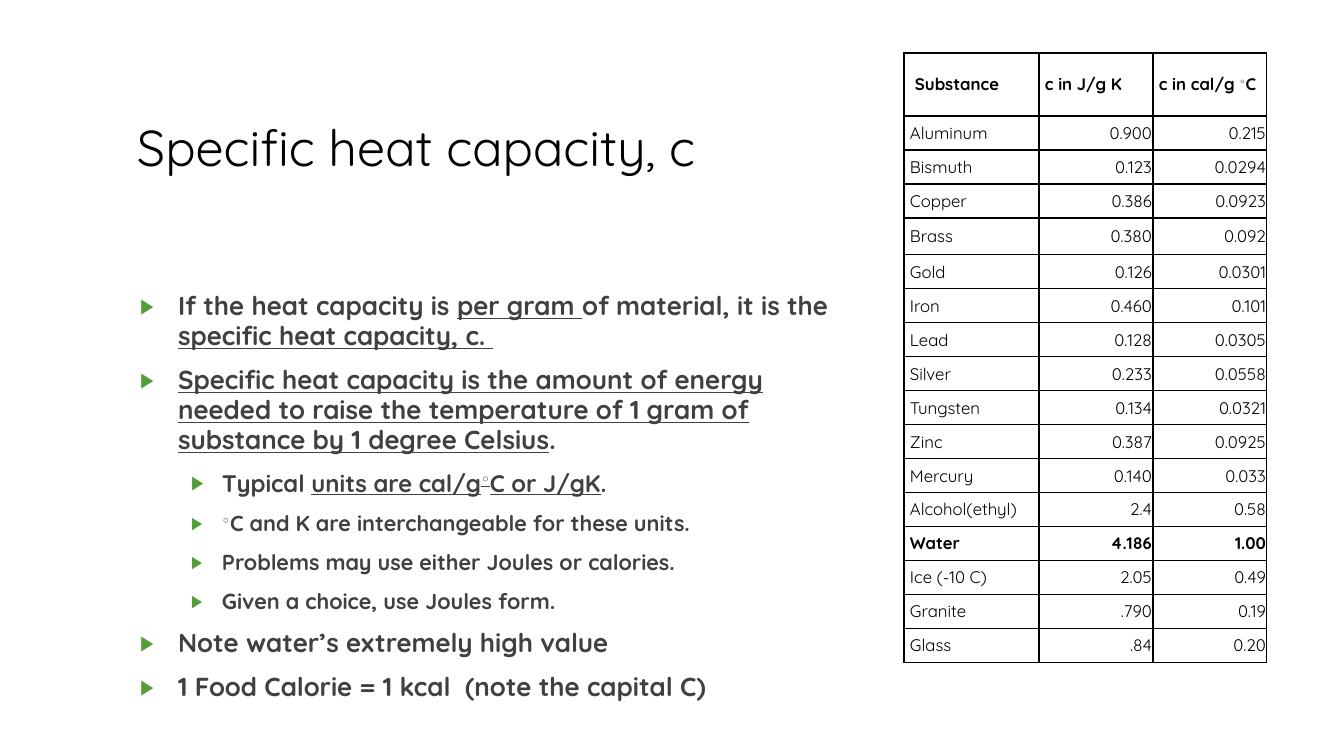
"""Build the slide on specific heat capacity with its table of substances."""
import lxml.etree
import pptx
import pptx.dml.color
import pptx.enum.text
import pptx.oxml.ns
import pptx.util

PX = 12192000 / 1344
FONT = "Quicksand"
BLACK = pptx.dml.color.RGBColor(0x00, 0x00, 0x00)
GREY = pptx.dml.color.RGBColor(0x40, 0x40, 0x40)
GREEN = pptx.dml.color.RGBColor(0x54, 0x9E, 0x39)
WHITE = pptx.dml.color.RGBColor(0xFF, 0xFF, 0xFF)
LEFT = pptx.enum.text.PP_ALIGN.LEFT
RIGHT = pptx.enum.text.PP_ALIGN.RIGHT
MIDDLE = pptx.enum.text.MSO_ANCHOR.MIDDLE
TOP = pptx.enum.text.MSO_ANCHOR.TOP


def add_span(para, text, size, color, bold=False, underline=False):
    """Add one formatted run, raising the degree ring."""
    span = para.add_run()
    span.text = text
    span.font.name = FONT
    span.font.size = pptx.util.Pt(size)
    span.font.color.rgb = color
    span.font.bold = bold
    span.font.underline = underline
    if text == "◦":
        span._r.get_or_add_rPr().set("baseline", "30000")


def add_element(parent, tag, **attributes):
    """Append a DrawingML element to its parent."""
    return lxml.etree.SubElement(parent, pptx.oxml.ns.qn(tag), attributes)


deck = pptx.Presentation()
deck.slide_width = round(1344 * PX)
deck.slide_height = round(756 * PX)
page = deck.slides.add_slide(deck.slide_layouts[1])
page.background.fill.solid()
page.background.fill.fore_color.rgb = WHITE

title, body = page.placeholders
for box, anchor, bounds in [
    (title, MIDDLE, (127, 107, 973, 78)),
    (body, TOP, (130, 287, 724, 377)),
]:
    box.left, box.top, box.width, box.height = [round(n * PX) for n in bounds]
    frame = box.text_frame
    frame.word_wrap = True
    frame.auto_size = pptx.enum.text.MSO_AUTO_SIZE.NONE
    frame.vertical_anchor = anchor
    frame.margin_left = frame.margin_right = round(10 * PX)
    frame.margin_top = frame.margin_bottom = round(5 * PX)

heading = title.text_frame.paragraphs[0]
heading.alignment = LEFT
add_span(heading, "Specific heat capacity, c", 36, BLACK)

POINTS = [
    (0, 18.6, [("If the heat capacity is ", False), ("per gram ", True),
               ("of material, it is the ", False), ("specific heat capacity, c. ", True)]),
    (0, 18.6, [("Specific heat capacity is the amount of energy needed to raise the "
                "temperature of 1 gram of substance by 1 degree Celsius", True), (".", False)]),
    (1, 17.1, [("Typical ", False), ("units are cal/g", True), ("◦", True),
               ("C or J/gK", True), (".", False)]),
    (1, 15.5, [("◦", False), ("C and K are interchangeable for these units.", False)]),
    (1, 15.5, [("Problems may use either Joules or calories.", False)]),
    (1, 15.5, [("Given a choice, use Joules form.", False)]),
    (0, 18.6, [("Note water’s extremely high value", False)]),
    (0, 18.6, [("1 Food Calorie = 1 kcal  (note the capital C)", False)]),
]
INDENTS = [(38, -38), (82, -31)]

for number, (level, size, spans) in enumerate(POINTS):
    para = body.text_frame.add_paragraph() if number else body.text_frame.paragraphs[0]
    para.level = level
    para.alignment = LEFT
    para.line_spacing = 0.96
    para.space_before = pptx.util.Pt(10 if number else 0)
    margin, indent = INDENTS[level]
    properties = para._p.get_or_add_pPr()
    properties.set("marL", str(round(margin * PX)))
    properties.set("indent", str(round(indent * PX)))
    add_element(add_element(properties, "a:buClr"), "a:srgbClr", val=str(GREEN))
    add_element(properties, "a:buSzPct", val="80000")
    add_element(properties, "a:buChar", char="▶")
    for text, underline in spans:
        add_span(para, text, size, GREY, True, underline)

ROWS = [
    ("Substance", "c in J/g K", "c in cal/g ◦C"),
    ("Aluminum", "0.900", "0.215"),
    ("Bismuth", "0.123", "0.0294"),
    ("Copper", "0.386", "0.0923"),
    ("Brass", "0.380", "0.092"),
    ("Gold", "0.126", "0.0301"),
    ("Iron", "0.460", "0.101"),
    ("Lead", "0.128", "0.0305"),
    ("Silver", "0.233", "0.0558"),
    ("Tungsten", "0.134", "0.0321"),
    ("Zinc", "0.387", "0.0925"),
    ("Mercury", "0.140", "0.033"),
    ("Alcohol(ethyl)", "2.4", "0.58"),
    ("Water", "4.186", "1.00"),
    ("Ice (-10 C)", "2.05", "0.49"),
    ("Granite", ".790", "0.19"),
    ("Glass", ".84", "0.20"),
]
COLUMN_WIDTHS = [135, 114, 114]
ROW_HEIGHTS = {"Substance": 63, "Brass": 37}
heights = [ROW_HEIGHTS.get(row[0], 34) for row in ROWS]

table = page.shapes.add_table(
    len(ROWS), len(COLUMN_WIDTHS), round(904 * PX), round(53 * PX),
    round(sum(COLUMN_WIDTHS) * PX), round(sum(heights) * PX),
).table
table.first_row = False
table.horz_banding = False
for column, width in zip(table.columns, COLUMN_WIDTHS):
    column.width = round(width * PX)

for row_number, values in enumerate(ROWS):
    table.rows[row_number].height = round(heights[row_number] * PX)
    for column_number, value in enumerate(values):
        cell = table.cell(row_number, column_number)
        is_header = row_number == 0
        is_label = is_header or column_number == 0
        inset = 11 if value == "Substance" else 6 if is_label else 1
        cell.margin_left = round(inset * PX)
        cell.margin_right = cell.margin_top = cell.margin_bottom = round(PX)
        cell.vertical_anchor = MIDDLE
        properties = cell._tc.get_or_add_tcPr()
        for side in ("a:lnL", "a:lnR", "a:lnT", "a:lnB"):
            border = add_element(properties, side, w=str(pptx.util.Pt(1)))
            add_element(add_element(border, "a:solidFill"), "a:srgbClr", val=str(BLACK))
        cell.fill.background()
        para = cell.text_frame.paragraphs[0]
        para.alignment = LEFT if is_label else RIGHT
        bold = is_header or values[0] == "Water"
        for text in value.partition("◦"):
            if text:
                add_span(para, text, 12, BLACK, bold)

deck.save("out.pptx")
